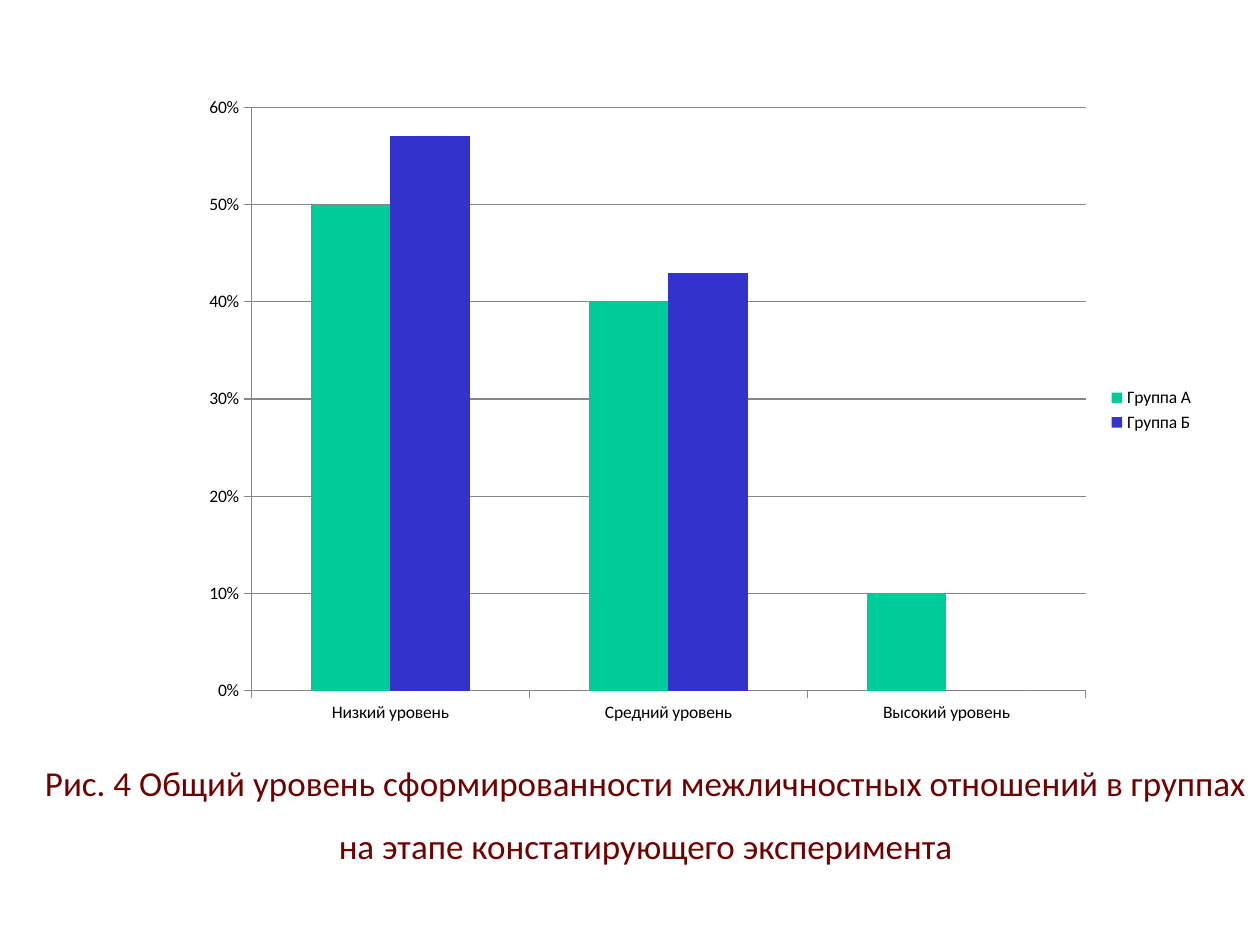
from pptx import Presentation
from pptx.chart.data import CategoryChartData
from pptx.dml.color import RGBColor
from pptx.enum.chart import XL_CHART_TYPE, XL_LEGEND_POSITION, XL_TICK_MARK
from pptx.enum.text import MSO_ANCHOR, MSO_AUTO_SIZE, PP_ALIGN
from pptx.util import Inches, Pt


def color(value):
    return RGBColor.from_string(value)


def write_text(shape, text, size, font_color, font_name="Calibri",
               alignment=PP_ALIGN.CENTER, line_spacing=1.0, space_after=0):
    frame = shape.text_frame
    frame.word_wrap = True
    frame.auto_size = MSO_AUTO_SIZE.NONE
    frame.vertical_anchor = MSO_ANCHOR.TOP
    paragraph = frame.paragraphs[0]
    paragraph.alignment = alignment
    paragraph.line_spacing = line_spacing
    paragraph.space_before = Pt(0)
    paragraph.space_after = Pt(space_after)
    run = paragraph.add_run()
    run.text = text
    run.font.name = font_name
    run.font.size = Pt(size)
    run.font.color.rgb = color(font_color)


presentation = Presentation()
presentation.slide_width = Inches(10)
presentation.slide_height = Inches(7.5)
slide = presentation.slides.add_slide(presentation.slide_layouts[0])
slide.background.fill.solid()
slide.background.fill.fore_color.rgb = color("FFFFFF")

title = slide.shapes.title
title.element.getparent().remove(title.element)

caption = slide.placeholders[1]
caption.left, caption.top = Inches(0.25), Inches(5.83)
caption.width, caption.height = Inches(9.75), Inches(1.31)
write_text(
    caption,
    "Рис. 4 Общий уровень сформированности межличностных отношений "
    "в группах на этапе констатирующего эксперимента",
    size=20, font_color="700000", line_spacing=1.5, space_after=10,
)

groups = [
    ("Группа А", (0.5, 0.4, 0.1), "00CC99"),
    ("Группа Б", (0.57, 0.43, 0), "3333CC"),
]
chart_data = CategoryChartData(number_format="0%")
chart_data.categories = ["Низкий уровень", "Средний уровень", "Высокий уровень"]
for name, values, fill_color in groups:
    chart_data.add_series(name, values)

chart = slide.shapes.add_chart(
    XL_CHART_TYPE.COLUMN_CLUSTERED,
    Inches(1.5), Inches(0.67), Inches(8.08), Inches(5.17), chart_data,
).chart
chart.has_title = False
chart.font.name = "Calibri"
chart.font.size = Pt(10)
chart.font.color.rgb = color("000000")
chart.has_legend = True
chart.legend.position = XL_LEGEND_POSITION.RIGHT
chart.legend.include_in_layout = False

plot = chart.plots[0]
plot.gap_width = 150
plot.overlap = 0
plot.vary_by_categories = False
for series, (name, values, fill_color) in zip(plot.series, groups):
    series.format.fill.solid()
    series.format.fill.fore_color.rgb = color(fill_color)

value_axis = chart.value_axis
value_axis.minimum_scale = 0
value_axis.maximum_scale = 0.6
value_axis.major_unit = 0.1
value_axis.has_major_gridlines = True
value_axis.tick_labels.number_format = "0%"
value_axis.tick_labels.number_format_is_linked = False
for axis in (chart.category_axis, value_axis):
    axis.major_tick_mark = XL_TICK_MARK.OUTSIDE
    axis.minor_tick_mark = XL_TICK_MARK.NONE
for line in (chart.category_axis.format.line, value_axis.format.line,
             value_axis.major_gridlines.format.line):
    line.color.rgb = color("868686")
    line.width = Pt(0.75)

presentation.save("out.pptx")
